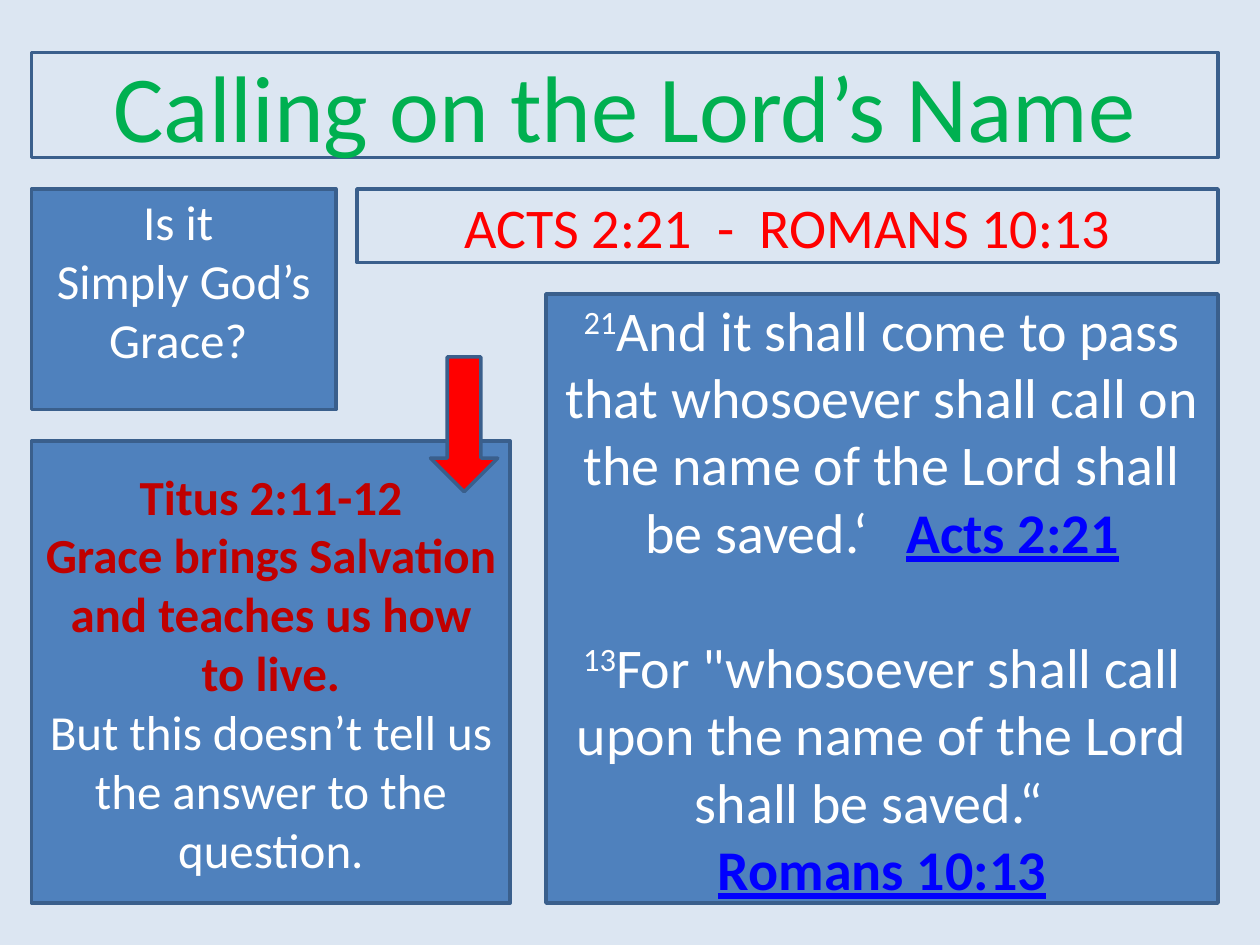
from pptx import Presentation
from pptx.dml.color import RGBColor
from pptx.enum.shapes import MSO_SHAPE
from pptx.enum.text import MSO_ANCHOR, PP_ALIGN
from pptx.util import Pt

PALE = RGBColor(0xDC, 0xE6, 0xF2)
BLUE = RGBColor(0x4F, 0x81, 0xBD)
EDGE = RGBColor(0x3A, 0x5F, 0x8C)
GREEN = RGBColor(0x00, 0xB0, 0x50)
RED = RGBColor(0xFF, 0x00, 0x00)
DARK = RGBColor(0xC0, 0x00, 0x00)
LINK = RGBColor(0x00, 0x00, 0xFF)
WHITE = RGBColor(0xFF, 0xFF, 0xFF)

LEFT, RIGHT, BASE = 18, 696, 516
ROW = 108  # top of the row below the title


def add_box(slide, left, top, right, bottom, fill=None, kind=MSO_SHAPE.RECTANGLE):
    """Draw an outlined shape between its edges; without fill it is clear."""
    box = slide.shapes.add_shape(
        kind, Pt(left), Pt(top), Pt(right - left), Pt(bottom - top))
    box.shadow.inherit = False
    box.line.color.rgb = EDGE
    box.line.width = Pt(2)
    if fill is None:
        box.fill.background()
    else:
        box.fill.solid()
        box.fill.fore_color.rgb = fill
    frame = box.text_frame
    frame.word_wrap = True
    frame.vertical_anchor = MSO_ANCHOR.MIDDLE
    return box


def add_text(para, text, size=28, color=WHITE, bold=False, line=False, raised=False):
    para.alignment = PP_ALIGN.CENTER
    run = para.add_run()
    run.text = text
    font = run.font
    font.name = "Calibri"
    font.size = Pt(size)
    font.color.rgb = color
    font.bold = bold
    font.underline = line
    if raised:
        run._r.get_or_add_rPr().set("baseline", "30000")


def add_verse(para, number, words):
    add_text(para, number, size=32, raised=True)
    add_text(para, words, size=32)


def add_source(para, name):
    add_text(para, name, size=32, color=LINK, bold=True, line=True)


def fill_verses(frame):
    first = frame.paragraphs[0]
    add_verse(first, "21", "And it shall come to pass that whosoever shall call on "
              "the name of the Lord shall be saved.‘   ")
    add_source(first, "Acts 2:21")
    second = frame.add_paragraph()
    second.space_before = Pt(39)
    add_verse(second, "13", "For \"whosoever shall call upon the name of the Lord "
              "shall be saved.“  ")
    add_source(frame.add_paragraph(), "Romans 10:13")


def fill_grace(frame):
    add_text(frame.paragraphs[0], "Titus 2:11-12", color=DARK, bold=True)
    add_text(frame.add_paragraph(), "Grace brings Salvation and teaches us how to live.",
             color=DARK, bold=True)
    add_text(frame.add_paragraph(), "But this doesn’t tell us the answer to the question.")


def main():
    deck = Presentation()
    deck.slide_width, deck.slide_height = Pt(720), Pt(540)
    slide = deck.slides.add_slide(deck.slide_layouts[6])
    back = slide.background.fill
    back.solid()
    back.fore_color.rgb = PALE

    title = add_box(slide, LEFT, 30, RIGHT, 90)
    add_text(title.text_frame.paragraphs[0], "Calling on the Lord’s Name",
             size=54, color=GREEN)

    texts = add_box(slide, 204, ROW, RIGHT, 150)
    add_text(texts.text_frame.paragraphs[0], "ACTS 2:21  -  ROMANS 10:13",
             size=32, color=RED)

    verses = add_box(slide, 312, 168, RIGHT, BASE, BLUE)
    fill_verses(verses.text_frame)

    ask = add_box(slide, LEFT, ROW, 192, 234, BLUE).text_frame
    ask.margin_bottom = Pt(25.6)
    add_text(ask.paragraphs[0], "Is it ")
    add_text(ask.add_paragraph(), "Simply God’s Grace? ")

    grace = add_box(slide, LEFT, 252, 291.6, BASE, BLUE)
    fill_grace(grace.text_frame)

    add_box(slide, 246, 204, 284.4, 281, RED, MSO_SHAPE.DOWN_ARROW)
    deck.save("out.pptx")


if __name__ == "__main__":
    main()
